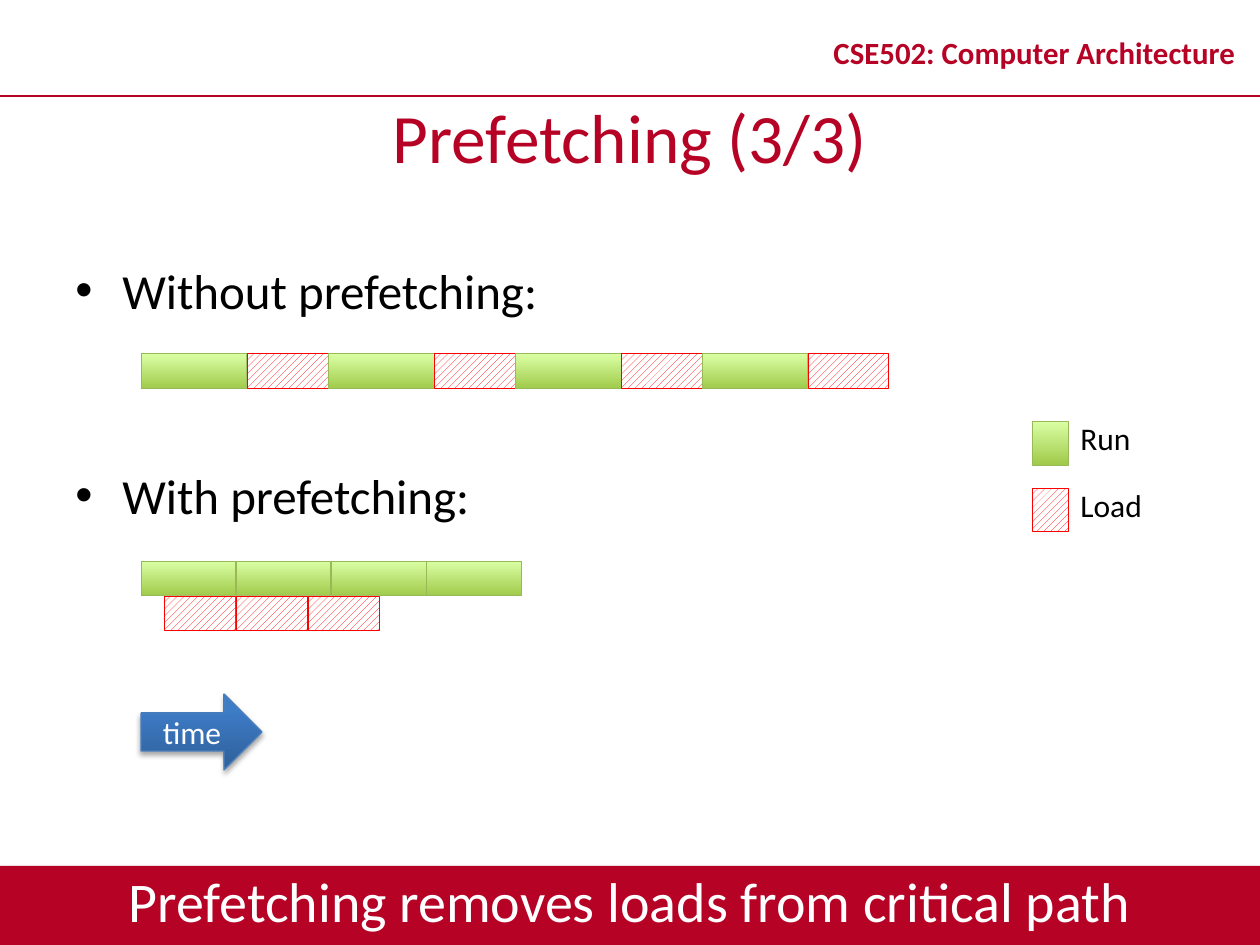
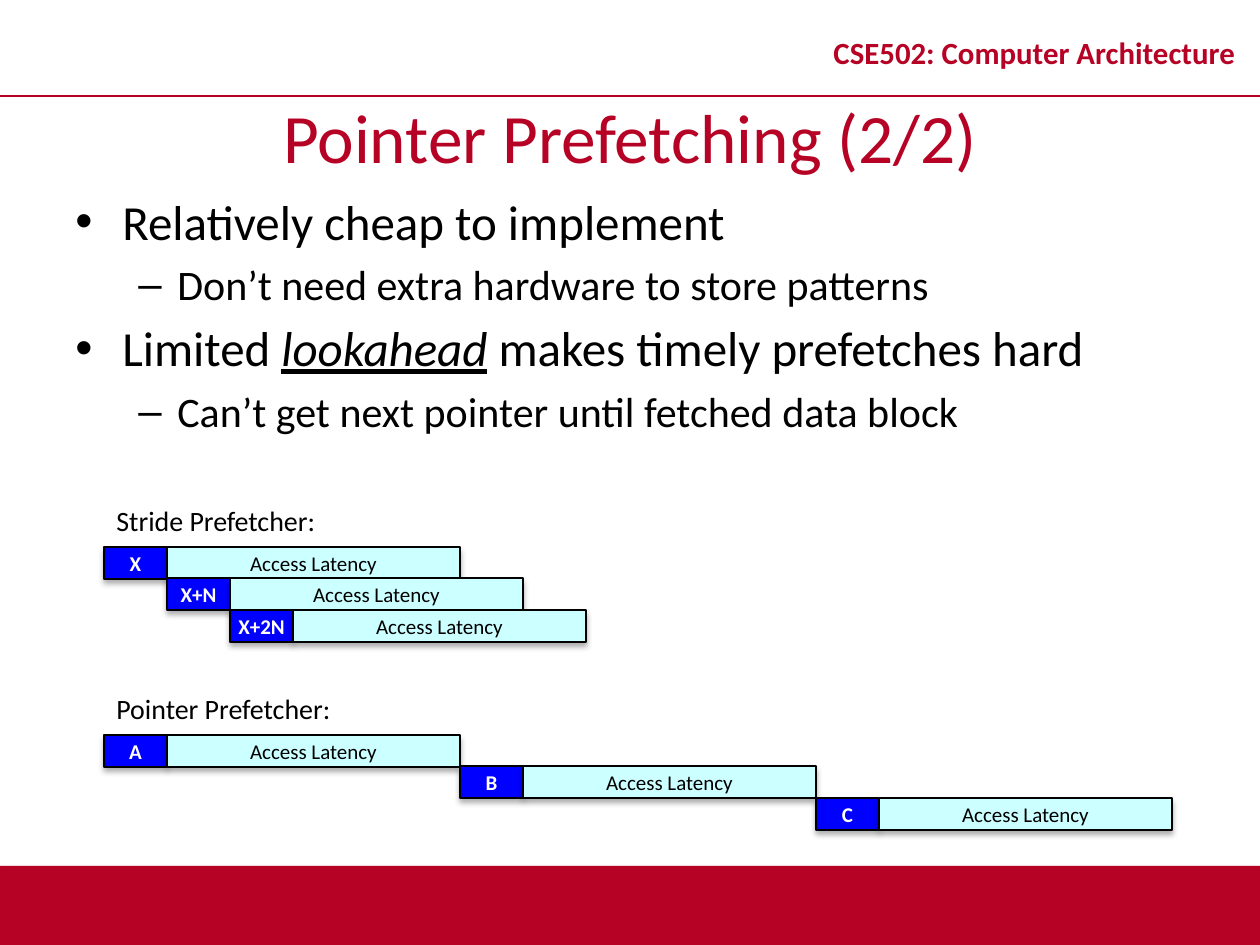
"""Build two lecture slides on prefetching."""
from dataclasses import dataclass

from lxml import etree
from pptx import Presentation
from pptx import util as u
from pptx.dml import color
from pptx.enum import dml, shapes, text
from pptx.oxml import ns

SCALE = 914400 / 126
WIDE, HIGH = 1260, 945


@dataclass(frozen=True)
class Theme:
    """Colours, font and type sizes of the deck."""
    face: str = "Calibri"
    red: str = "B60225"
    ink: str = "000000"
    white: str = "FFFFFF"
    run: tuple = ("A0CA4A", "DAFFA5", 1)
    edge: str = "98B955"
    load: str = "FF0000"
    arrow: tuple = ("2F5F99", "3D7CC7", 0.8)
    rim: str = "4B7EBC"
    tag: str = "0000FF"
    wait: str = "CCFFFF"
    title: float = 39.6
    head: float = 17.6
    foot: float = 32
    levels: tuple = (28, 24)
    key: float = 18
    label: float = 16
    cell: float = 12
    soft: tuple = (35, 3.1, 1.8)
    deep: tuple = (32, 3.5, 2.2)


T = Theme()
LEFT, MID = text.PP_ALIGN.LEFT, text.PP_ALIGN.CENTER
TOP, CENTRE = text.MSO_ANCHOR.TOP, text.MSO_ANCHOR.MIDDLE


def px(*vals):
    """Turn pixel lengths into EMU."""
    return [u.Emu(round(v * SCALE)) for v in vals]


def rgb(code):
    """Make a colour from its hex code."""
    return color.RGBColor.from_string(code)


def put(item, vals):
    """Set attributes from a dict."""
    for name, val in vals.items():
        setattr(item, name, val)


def node(top, name, **attrs):
    """Add a drawing element under another."""
    return etree.SubElement(top, ns.qn(name), attrs)


def add_run(para, words, size, ink=T.ink, **more):
    """Add one formatted run to a paragraph."""
    run = para.add_run()
    run.text = words
    put(run.font, {"name": T.face, "size": u.Pt(size), **more})
    run.font.color.rgb = rgb(ink)


def write(shape, words, size, ink=T.ink, align=MID, anchor=CENTRE,
          pad=True, space=None, **more):
    """Write one line of text into a shape."""
    frame = shape.text_frame
    put(frame, {"word_wrap": True, "vertical_anchor": anchor,
                "auto_size": text.MSO_AUTO_SIZE.NONE})
    if not pad:
        sides = ("left", "right", "top", "bottom")
        put(frame, {f"margin_{side}": 0 for side in sides})
    para = frame.paragraphs[0]
    put(para, {"alignment": align, "line_spacing": space})
    add_run(para, words, size, ink, **more)


def add_text(slide, box, words, size, **more):
    """Place a text box with one line."""
    write(slide.shapes.add_textbox(*px(*box)), words, size, **more)


def shade(shape, glow):
    """Drop a shadow straight below a shape."""
    alpha, blur, dist = glow
    group = shape._element.spPr.find(ns.qn("a:effectLst"))
    cast = node(group, "a:outerShdw", blurRad=str(u.Pt(blur)),
                dist=str(u.Pt(dist)), dir="5400000", rotWithShape="0")
    tint = node(cast, "a:srgbClr", val=T.ink)
    node(tint, "a:alpha", val=str(alpha * 1000))


def add_box(slide, box, fill, line=None, width=0.75, glow=None,
            kind=shapes.MSO_SHAPE.RECTANGLE):
    """Place a shape with a solid or upward gradient fill."""
    shape = slide.shapes.add_shape(kind, *px(*box))
    shape.shadow.inherit = False
    if isinstance(fill, tuple):
        shape.fill.gradient()
        shape.fill.gradient_angle = 90
        low, high, end = fill
        stops = shape.fill.gradient_stops
        for stop, code, place in zip(stops, (low, high), (0, end)):
            stop.color.rgb = rgb(code)
            stop.position = place
    else:
        shape.fill.solid()
        shape.fill.fore_color.rgb = rgb(fill)
    if line:
        shape.line.color.rgb = rgb(line)
        shape.line.width = u.Pt(width)
    else:
        shape.line.fill.background()
    if glow:
        shade(shape, glow)
    return shape


def add_load(slide, box):
    """Place a hatched load block."""
    fill = add_box(slide, box, T.white, T.load, 0.5).fill
    fill.patterned()
    fill.pattern = dml.MSO_PATTERN.WIDE_UPWARD_DIAGONAL
    fill.fore_color.rgb = rgb(T.load)
    fill.back_color.rgb = rgb(T.white)


def add_work(slide, box):
    """Place a green run block."""
    add_box(slide, box, T.run, T.edge, 0.5)


def add_page(deck, title):
    """Start a slide with its header, footer band and title."""
    slide = deck.slides.add_slide(deck.slide_layouts[5])
    add_box(slide, (0, 866, WIDE, HIGH - 866), T.red, glow=T.soft)
    rule = slide.shapes.add_connector(
        shapes.MSO_CONNECTOR.STRAIGHT, *px(0, 96, WIDE, 96))
    rule.line.color.rgb = rgb(T.red)
    rule.line.width = u.Pt(1)
    node(rule._element.spPr, "a:effectLst")
    add_text(slide, (809, 16, 451, 79), "CSE502: Computer Architecture",
             T.head, ink=T.red, space=0.8, bold=True)
    head = slide.shapes.title
    put(head, dict(zip(("left", "top", "width", "height"),
                       px(0, 96, WIDE, 79))))
    write(head, title, T.title, T.red)
    return slide


def add_list(slide, box, items, gap):
    """Place bullets given as (level, runs), a run being (words, format)."""
    frame = slide.shapes.add_textbox(*px(*box)).text_frame
    frame.word_wrap = True
    for num, (level, runs) in enumerate(items):
        para = frame.add_paragraph() if num else frame.paragraphs[0]
        edge, hang = px(*((47, 47), (102, 39))[level])
        props = para._p.get_or_add_pPr()
        props.set("marL", str(edge))
        props.set("indent", str(-hang))
        node(props, "a:buFont", typeface="Arial")
        node(props, "a:buChar", char="•–"[level])
        put(para, {"level": level, "space_before": u.Pt(gap if num else 0)})
        for words, form in runs:
            add_run(para, words, T.levels[level], **form)


def add_legend(slide, left, top):
    """Explain the two kinds of block."""
    for num, (name, draw) in enumerate((("Run", add_work),
                                        ("Load", add_load))):
        row = top + 67 * num
        draw(slide, (left, row, 37, 44))
        add_text(slide, (left + 36, row - 8, 100, 50), name, T.key,
                 align=LEFT, anchor=TOP)


def add_serial(slide, left, top):
    """Draw runs and loads taking turns."""
    work, load, high = 106, 81, 35
    for num in range(4):
        start = left + num * (work + load)
        add_work(slide, (start, top, work, high))
        add_load(slide, (start + work, top, load, high))


def add_overlap(slide, left, top):
    """Draw loads hidden beneath back-to-back runs."""
    work, load, high = 95, 72, 35
    for num in range(4):
        add_work(slide, (left + num * work, top, work, high))
    for num in range(3):
        add_load(slide, (left + 23 + num * load, top + high, load, high))


def add_stairs(slide, left, top, name, tags, step):
    """Draw a titled staircase of fetches, each followed by its latency."""
    tag, wait, high = 63, 293, 32
    add_text(slide, (left, top, 260, 47), name, T.label,
             align=LEFT, anchor=TOP)
    for num, mark in enumerate(tags):
        start, row = left + num * step, top + 50 + num * 63 // 2
        cells = ((start, tag, T.tag, mark, T.white, True),
                 (start + tag, wait, T.wait, "Access Latency", T.ink, False))
        for side, wide, fill, words, ink, bold in cells:
            cell = add_box(slide, (side, row, wide, high), fill, T.ink,
                           glow=T.deep)
            write(cell, words, T.cell, ink, pad=False, bold=bold)


def add_timing(deck):
    """Build the slide comparing both timelines."""
    slide = add_page(deck, "Prefetching (3/3)")
    add_list(slide, (63, 254, 900, 290),
             [(0, [("Without prefetching:", {})]),
              (0, [("With prefetching:", {})])], 83.5)
    add_legend(slide, 1032, 421)
    add_serial(slide, 141, 354)
    add_overlap(slide, 141, 561)
    arrow = add_box(slide, (141, 694, 121, 76), T.arrow, T.rim, glow=T.soft,
                    kind=shapes.MSO_SHAPE.RIGHT_ARROW)
    write(arrow, "time", T.key, T.white, pad=False)
    add_text(slide, (0, 860, WIDE, 79),
             "Prefetching removes loads from critical path", T.foot,
             ink=T.white, anchor=TOP)


def add_pointer(deck):
    """Build the slide comparing stride and pointer prefetchers."""
    slide = add_page(deck, "Pointer Prefetching (2/2)")
    stress = {"italic": True, "underline": True}
    add_list(slide, (63, 185, 1134, 290),
             [(0, [("Relatively cheap to implement", {})]),
              (1, [("Don’t need extra hardware to store patterns", {})]),
              (0, [("Limited ", {}), ("lookahead", stress),
                   (" makes timely prefetches hard", {})]),
              (1, [("Can’t get next pointer until fetched data block", {})])],
             5)
    add_stairs(slide, 104, 497, "Stride Prefetcher:",
               ("X", "X+N", "X+2N"), 63)
    add_stairs(slide, 104, 685, "Pointer Prefetcher:", "ABC", 356)


def main():
    """Build and save the deck."""
    deck = Presentation()
    deck.slide_width, deck.slide_height = px(WIDE, HIGH)
    add_timing(deck)
    add_pointer(deck)
    deck.save("out.pptx")


if __name__ == "__main__":
    main()
